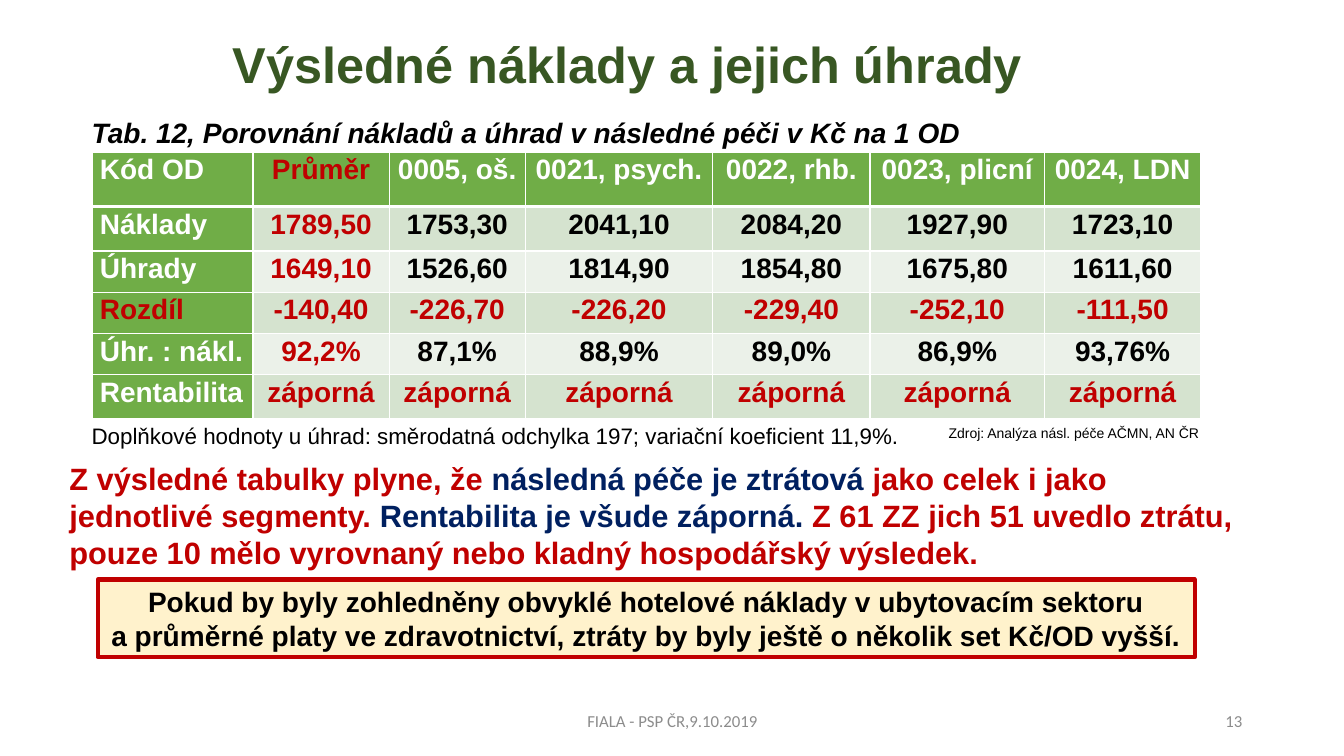
"""Build the slide comparing follow-up care costs with their reimbursement."""
from lxml.etree import SubElement
from pptx import Presentation
from pptx.dml.color import RGBColor
from pptx.enum.shapes import MSO_SHAPE as Shape
from pptx.enum.text import MSO_ANCHOR as Anchor, MSO_AUTO_SIZE as AutoSize, PP_ALIGN as Align
from pptx.oxml.ns import qn
from pptx.util import Inches, Pt

RED = RGBColor(0xC0, 0x00, 0x00)
NAVY = RGBColor(0x00, 0x20, 0x60)
BLACK = RGBColor(0x00, 0x00, 0x00)
WHITE = RGBColor(0xFF, 0xFF, 0xFF)
GRAY = RGBColor(0x8C, 0x8C, 0x8C)
DARK_GREEN = RGBColor(0x38, 0x57, 0x23)
GREEN = RGBColor(0x70, 0xAD, 0x47)
BANDS = [RGBColor(0xEB, 0xF1, 0xE9), RGBColor(0xD5, 0xE3, 0xCF)]
CREAM = RGBColor(0xFF, 0xF2, 0xCC)

TITLE = "Výsledné náklady a jejich úhrady"
CAPTION = "Tab. 12, Porovnání nákladů a úhrad v následné péči v\u00a0Kč na 1 OD"
ROWS = [
    ["Kód OD", "Průměr", "0005, oš.", "0021, psych.", "0022, rhb.", "0023, plicní", "0024, LDN"],
    ["Náklady", "1789,50", "1753,30", "2041,10", "2084,20", "1927,90", "1723,10"],
    ["Úhrady", "1649,10", "1526,60", "1814,90", "1854,80", "1675,80", "1611,60"],
    ["Rozdíl", "-140,40", "-226,70", "-226,20", "-229,40", "-252,10", "-111,50"],
    ["Úhr. : nákl.", "92,2%", "87,1%", "88,9%", "89,0%", "86,9%", "93,76%"],
    ["Rentabilita"] + ["záporná"] * 6,
]
COLUMN_WIDTHS = [1.59, 1.35, 1.35, 1.86, 1.56, 1.73, 1.55]
ROW_HEIGHTS = [0.54, 0.44, 0.41, 0.41, 0.41, 0.43]
LOSS_ROWS = ("Rozdíl", "Rentabilita")
NOTE = "Doplňkové hodnoty u úhrad: směrodatná odchylka 197; variační koeficient 11,9%."
SOURCE = "Zdroj: Analýza násl. péče AČMN, AN ČR"
FINDING = [
    ("Z výsledné tabulky plyne, že ", RED),
    ("následná péče je ztrátová", NAVY),
    (" jako celek i jako jednotlivé segmenty. ", RED),
    ("Rentabilita je všude záporná.", NAVY),
    (" Z 61 ZZ jich 51 uvedlo ztrátu, pouze 10 mělo vyrovnaný "
     "nebo kladný hospodářský výsledek.", RED),
]
CONCLUSION = [
    "Pokud by byly zohledněny obvyklé hotelové náklady v ubytovacím sektoru",
    "a průměrné platy ve zdravotnictví, ztráty by byly ještě o několik set Kč/OD vyšší.",
]
FOOTER = "FIALA - PSP ČR,9.10.2019"
PAGE_NUMBER = "13"


def assign(target, values):
    for name, value in values.items():
        setattr(target, name, value)


def write(frame, paragraphs, size, layout=None, **style):
    """Fill a text frame with paragraphs, each a list of (text, colour) runs."""
    for index, runs in enumerate(paragraphs):
        para = frame.add_paragraph() if index else frame.paragraphs[0]
        assign(para, layout or {})
        for text, color in runs:
            span = para.add_run()
            span.text = text
            assign(span.font, {"name": "Arial", "size": Pt(size), **style})
            span.font.color.rgb = color


def place(shape, left, top, width, height):
    sides = {"left": left, "top": top, "width": width, "height": height}
    assign(shape, {side: Inches(value) for side, value in sides.items()})


def add_text(page, bounds, paragraphs, size, layout=None, frame_format=None, **style):
    box = page.shapes.add_textbox(*map(Inches, bounds))
    assign(box.text_frame, {"word_wrap": True, **(frame_format or {})})
    write(box.text_frame, paragraphs, size, layout, **style)


def set_borders(cell, widths):
    properties = cell._tc.get_or_add_tcPr()
    for side, width in zip("LRTB", widths):
        line = SubElement(properties, qn(f"a:ln{side}"), w=str(Pt(width)))
        SubElement(SubElement(line, qn("a:solidFill")), qn("a:srgbClr"), val=str(WHITE))


def text_color(row, column):
    label = ROWS[row][0]
    if column == 1 or label == "Rozdíl" or (column and label in LOSS_ROWS):
        return RED
    return BLACK if row and column else WHITE


def add_cost_table(page):
    bounds = map(Inches, (0.92, 1.51, sum(COLUMN_WIDTHS), sum(ROW_HEIGHTS)))
    table = page.shapes.add_table(len(ROWS), len(COLUMN_WIDTHS), *bounds).table
    for column, width in zip(table.columns, COLUMN_WIDTHS):
        column.width = Inches(width)
    for row, height in zip(table.rows, ROW_HEIGHTS):
        row.height = Inches(height)
    for r, values in enumerate(ROWS):
        for c, value in enumerate(values):
            cell = table.cell(r, c)
            assign(cell, {"margin_left": Inches(0.07), "margin_right": Inches(0.07),
                          "margin_top": 0, "margin_bottom": 0})
            set_borders(cell, (1, 1, 3 if r == 1 else 1, 3 if r == 0 else 1))
            cell.fill.solid()
            cell.fill.fore_color.rgb = BANDS[r % 2] if r and c else GREEN
            layout = {"alignment": Align.CENTER if c else Align.LEFT, "line_spacing": 1.07}
            write(cell.text_frame, [[(value, text_color(r, c))]], 20, layout, bold=True)


def add_conclusion(page):
    box = page.shapes.add_shape(Shape.RECTANGLE, *map(Inches, (0.97, 5.75, 10.88, 0.77)))
    box.shadow.inherit = False
    box.fill.solid()
    box.fill.fore_color.rgb = CREAM
    box.line.color.rgb = RED
    box.line.width = Pt(3)
    assign(box.text_frame, {"word_wrap": False, "vertical_anchor": Anchor.TOP,
                            "auto_size": AutoSize.SHAPE_TO_FIT_TEXT})
    write(box.text_frame, [[(line, BLACK)] for line in CONCLUSION], 20,
          {"alignment": Align.CENTER}, bold=True)


def main():
    deck = Presentation()
    assign(deck, {"slide_width": Inches(13.33), "slide_height": Inches(7.5)})
    page = deck.slides.add_slide(deck.slide_layouts[1])

    title, body = page.placeholders
    place(title, 0.92, 0.2, 10.61, 0.94)
    title.text_frame.vertical_anchor = Anchor.MIDDLE
    write(title.text_frame, [[(TITLE, DARK_GREEN)]], 36,
          {"alignment": Align.CENTER, "line_spacing": 0.9}, bold=True)

    place(body, 0.81, 1.13, 11.5, 4.76)
    write(body.text_frame, [[(CAPTION, BLACK)]], 20,
          {"line_spacing": 0.9, "space_before": Pt(10)}, bold=True, italic=True)
    properties = body.text_frame.paragraphs[0]._p.get_or_add_pPr()
    properties.set("marL", "0")
    properties.set("indent", "0")
    SubElement(properties, qn("a:buNone"))

    add_cost_table(page)
    grow = {"auto_size": AutoSize.SHAPE_TO_FIT_TEXT}
    add_text(page, (0.81, 4.14, 8.39, 0.37), [[(NOTE, BLACK)]], 16,
             {"alignment": Align.JUSTIFY}, grow)
    add_text(page, (9.31, 4.16, 2.73, 0.27), [[(SOURCE, BLACK)]], 10,
             frame_format={**grow, "word_wrap": False})
    add_text(page, (0.59, 4.51, 11.81, 1.21), [FINDING], 22, frame_format=grow, bold=True)
    add_conclusion(page)

    middle = {"vertical_anchor": Anchor.MIDDLE}
    for text, left, width, alignment in [(FOOTER, 4.42, 4.5, Align.CENTER),
                                         (PAGE_NUMBER, 9.42, 3, Align.RIGHT)]:
        add_text(page, (left, 6.95, width, 0.4), [[(text, GRAY)]], 12,
                 {"alignment": alignment}, middle, name="Calibri")
    deck.save("out.pptx")


if __name__ == "__main__":
    main()
